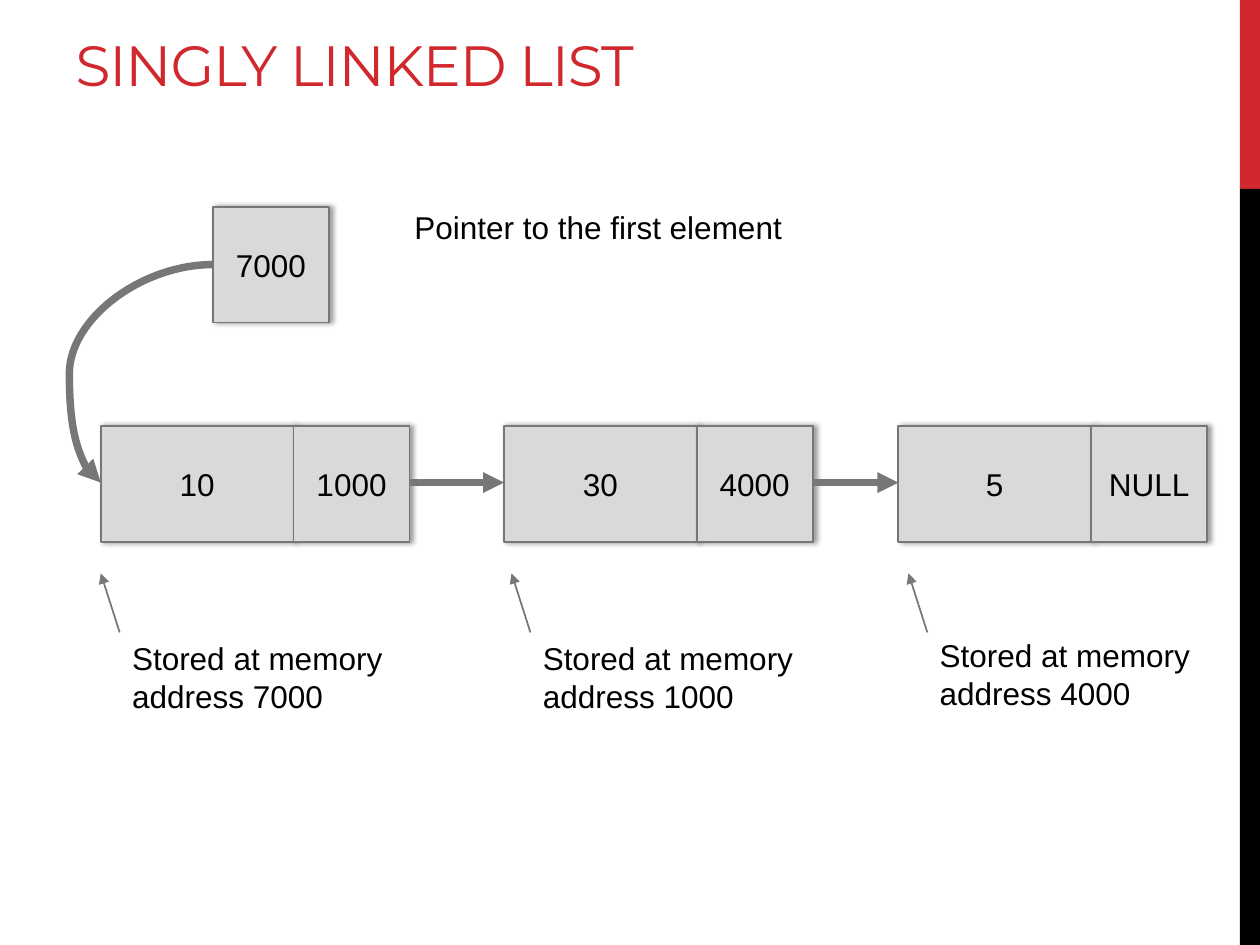
from typing import NamedTuple

from lxml import etree
from pptx import Presentation
from pptx.dml.color import RGBColor
from pptx.enum import shapes as kinds, text as txt
from pptx.oxml import parse_xml
from pptx.oxml.ns import nsdecls, qn
from pptx.util import Inches, Pt

RED, BLACK, GREY, LIGHT_GREY = "D1282E", "000000", "777777", "D9D9D9"
NODE_TOP, CELL = 3.38, 0.92
VALUE_WIDTH = 1.53
LINK_Y = 3.83
NOTE_ARROW_TOP, NOTE_ARROW_BOTTOM = 4.55, 5.02


class Node(NamedTuple):
    left: float
    value: str
    next_address: str
    address: str
    note_left: float
    note_top: float

    @property
    def right(self) -> float:
        return self.left + VALUE_WIDTH + CELL


NODES = [
    Node(0.8, "10", "1000", "7000", 0.95, 5.02),
    Node(4, "30", "4000", "1000", 4.21, 5.02),
    Node(7.13, "5", "NULL", "4000", 7.36, 5),
]


def rgb(color: str) -> RGBColor:
    return RGBColor.from_string(color)


def style_text(frame, size: float = 18, color: str = BLACK, font: str = "Arial") -> None:
    for paragraph in frame.paragraphs:
        for run in paragraph.runs:
            run.font.size, run.font.name = Pt(size), font
            run.font.color.rgb = rgb(color)


def add_rect(parent, left: float, top: float, width: float, height: float, fill: str):
    rect = parent.shapes.add_shape(
        kinds.MSO_SHAPE.RECTANGLE,
        Inches(left), Inches(top), Inches(width), Inches(height))
    rect.shadow.inherit = False
    rect.fill.solid()
    rect.fill.fore_color.rgb = rgb(fill)
    rect.line.fill.background()
    return rect


def add_cell(parent, left: float, top: float, width: float, label: str) -> None:
    """Add an outlined memory cell with a soft shadow to its right."""
    cell = add_rect(parent, left, top, width, CELL, LIGHT_GREY)
    cell.line.color.rgb = rgb(GREY)
    cell.line.width = Pt(1)
    cell._element.spPr.find(qn("a:effectLst")).append(parse_xml(
        f'<a:outerShdw {nsdecls("a")} blurRad="{Pt(3.1)}" dist="{Pt(1.8)}" dir="0" '
        f'rotWithShape="0"><a:srgbClr val="{BLACK}"><a:alpha val="40000"/>'
        '</a:srgbClr></a:outerShdw>'))
    frame = cell.text_frame
    frame.text = label
    frame.vertical_anchor = txt.MSO_ANCHOR.MIDDLE
    frame.paragraphs[0].alignment = txt.PP_ALIGN.CENTER
    style_text(frame)


def add_arrow(slide, start: tuple[float, float], end: tuple[float, float], width: float,
              kind=kinds.MSO_CONNECTOR.STRAIGHT):
    arrow = slide.shapes.add_connector(kind, *map(Inches, start + end))
    arrow.line.color.rgb = rgb(GREY)
    arrow.line.width = Pt(width)
    etree.SubElement(arrow.line._get_or_add_ln(), qn("a:tailEnd"), type="triangle")
    etree.SubElement(arrow._element.spPr, qn("a:effectLst"))
    return arrow


def add_label(slide, left: float, top: float, width: float, height: float,
              label: str, wrap: bool = True) -> None:
    box = slide.shapes.add_textbox(Inches(left), Inches(top), Inches(width), Inches(height))
    frame = box.text_frame
    frame.word_wrap = wrap
    frame.auto_size = txt.MSO_AUTO_SIZE.SHAPE_TO_FIT_TEXT
    frame.text = label
    style_text(frame)


def add_title(slide, label: str) -> None:
    title = slide.shapes.title
    title.left, title.top = Inches(0.5), Inches(0.17)
    title.width, title.height = Inches(9.02), Inches(0.66)
    frame = title.text_frame
    frame.text = label
    frame.vertical_anchor = txt.MSO_ANCHOR.BOTTOM
    paragraph = frame.paragraphs[0]
    paragraph.alignment = txt.PP_ALIGN.LEFT
    style_text(frame, 32.4, RED, "Montserrat")
    paragraph.runs[0].font._element.set("spc", "-60")


def add_node(slide, node: Node) -> None:
    group = slide.shapes.add_group_shape()
    add_cell(group, node.left, NODE_TOP, VALUE_WIDTH, node.value)
    add_cell(group, node.left + VALUE_WIDTH, NODE_TOP, CELL, node.next_address)
    add_label(slide, node.note_left, node.note_top, 2.23, 0.71,
              f"Stored at memory address {node.address}")
    add_arrow(slide, (node.note_left, NOTE_ARROW_BOTTOM),
              (node.note_left - 0.15, NOTE_ARROW_TOP), 1)


def add_head_pointer(slide, first: Node) -> None:
    left, top = 1.69, 1.64
    add_cell(slide, left, top, CELL, first.address)
    add_label(slide, 3.19, 1.6, 3.15, 0.4, "Pointer to the first element", wrap=False)
    curve = add_arrow(slide, (left, top + CELL / 2), (first.left, LINK_Y), 4.25,
                      kinds.MSO_CONNECTOR.CURVE)
    guides = curve._element.spPr.find(qn("a:prstGeom")).find(qn("a:avLst"))
    etree.SubElement(guides, qn("a:gd"), name="adj1", fmla="val 128000")


def main() -> None:
    deck = Presentation()
    deck.slide_width, deck.slide_height = Inches(10), Inches(7.5)
    slide = deck.slides.add_slide(deck.slide_layouts[5])
    add_rect(slide, 9.84, 0, 0.16, 1.5, RED)
    add_rect(slide, 9.84, 1.5, 0.16, 6, BLACK)
    add_title(slide, "SINGLY LINKED LIST")
    for node in NODES:
        add_node(slide, node)
    for node, following in zip(NODES, NODES[1:]):
        add_arrow(slide, (node.right, LINK_Y), (following.left, LINK_Y), 4)
    add_head_pointer(slide, NODES[0])
    deck.save("out.pptx")


if __name__ == "__main__":
    main()
